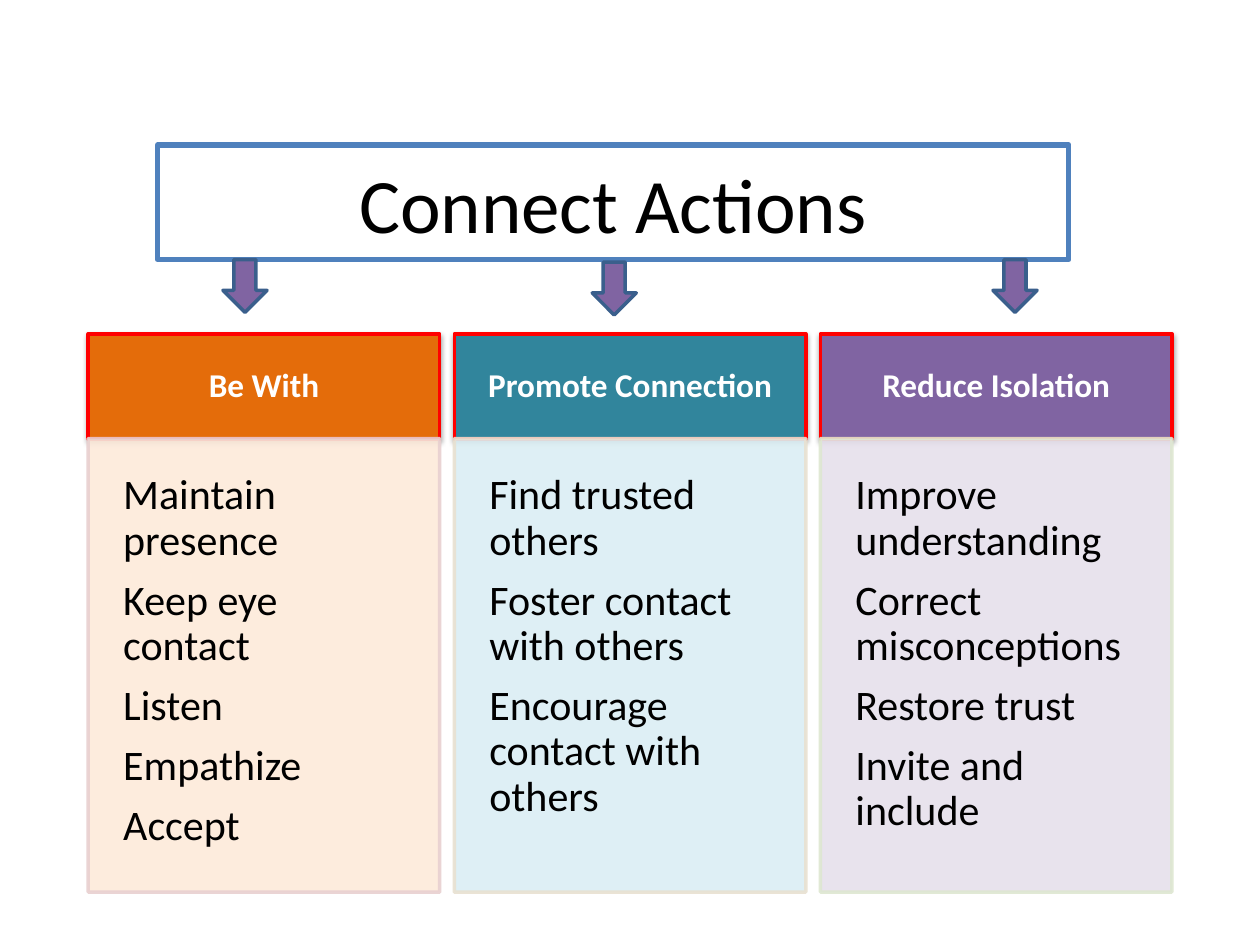
from lxml.etree import SubElement
from pptx import Presentation
from pptx.dml.color import RGBColor
from pptx.enum.shapes import MSO_SHAPE
from pptx.enum.text import MSO_ANCHOR, PP_ALIGN
from pptx.oxml.ns import qn
from pptx.util import Pt

COLUMN_LEFT, COLUMN_PITCH, COLUMN_WIDTH = 50.4, 209.2, 200.9
HEADER_TOP, HEADER_HEIGHT = 190.8, 60
BODY_TOP, BODY_HEIGHT = 250.6, 259.2

# Heading, heading fill, body fill, body line, actions
COLUMNS = [
    ("Be With", "E46C0A", "FDEADA", "E8D0D0",
     ["Maintain presence", "Keep eye contact", "Listen", "Empathize", "Accept"]),
    ("Promote Connection", "31859C", "DBEEF4", "E8E1D1",
     ["Find trusted others", "Foster contact with others",
      "Encourage contact with others"]),
    ("Reduce Isolation", "8064A2", "E6E0EC", "DEE7D1",
     ["Improve understanding", "Correct misconceptions", "Restore trust",
      "Invite and include"]),
]
ARROWS = [(127.4, 148.3), (338.4, 149.8), (567.4, 148.3)]


def color(value):
    return RGBColor.from_string(value)


def set_alpha(fill_parent, percent):
    """Make the solid fill directly inside the given element translucent."""
    choice = fill_parent.find(qn("a:solidFill"))[0]
    SubElement(choice, qn("a:alpha"), val=str(percent * 1000))


def add_soft_shadow(shape):
    effects = shape._element.spPr.find(qn("a:effectLst"))
    shadow = SubElement(effects, qn("a:outerShdw"), blurRad=str(Pt(3.1)),
                        dist=str(Pt(1.6)), dir="5400000", rotWithShape="0")
    black = SubElement(shadow, qn("a:srgbClr"), val="000000")
    SubElement(black, qn("a:alpha"), val="38000")


def add_block(slide, kind, left, top, width, height, fill, line, line_width=2):
    shape = slide.shapes.add_shape(kind, Pt(left), Pt(top), Pt(width), Pt(height))
    shape.shadow.inherit = False
    if fill:
        shape.fill.solid()
        shape.fill.fore_color.rgb = color(fill)
    else:
        shape.fill.background()
    shape.line.color.rgb = color(line)
    shape.line.width = Pt(line_width)
    return shape


def write(shape, lines, size, text_color="000000", bold=False, inset=(5, 3),
          align=PP_ALIGN.CENTER, anchor=MSO_ANCHOR.MIDDLE, spacing=1.0, gap=0):
    frame = shape.text_frame
    frame.word_wrap = True
    frame.vertical_anchor = anchor
    frame.margin_left = frame.margin_right = Pt(inset[0])
    frame.margin_top = frame.margin_bottom = Pt(inset[1])
    frame.text = "\n".join(lines)
    for para in frame.paragraphs:
        para.alignment = align
        para.line_spacing = spacing
        para.space_after = Pt(gap)
        for span in para.runs:
            span.font.name = "Calibri"
            span.font.size = Pt(size)
            span.font.bold = bold
            span.font.color.rgb = color(text_color)


def add_title(slide, text):
    box = add_block(slide, MSO_SHAPE.RECTANGLE, 90, 82.8, 520.8, 65.5,
                    None, "4F81BD", 3)
    write(box, [text], 44)


def add_column(slide, left, heading, heading_fill, body_fill, body_line, actions):
    header = add_block(slide, MSO_SHAPE.RECTANGLE, left, HEADER_TOP,
                       COLUMN_WIDTH, HEADER_HEIGHT, heading_fill, "FF0000")
    add_soft_shadow(header)
    write(header, [heading], 19, "FFFFFF", bold=True, inset=(16, 16), spacing=0.9)

    body = add_block(slide, MSO_SHAPE.RECTANGLE, left, BODY_TOP,
                     COLUMN_WIDTH, BODY_HEIGHT, body_fill, body_line)
    properties = body._element.spPr
    set_alpha(properties, 90)
    set_alpha(properties.find(qn("a:ln")), 90)
    write(body, actions, 24, inset=(20, 20), align=PP_ALIGN.LEFT,
          anchor=MSO_ANCHOR.TOP, spacing=0.9, gap=8.4)


def main():
    deck = Presentation()
    deck.slide_width, deck.slide_height = Pt(720), Pt(540)
    slide = deck.slides.add_slide(deck.slide_layouts[6])
    add_title(slide, "Connect Actions")
    for index, column in enumerate(COLUMNS):
        add_column(slide, COLUMN_LEFT + index * COLUMN_PITCH, *column)
    for left, top in ARROWS:
        add_block(slide, MSO_SHAPE.DOWN_ARROW, left, top, 25.2, 30.2,
                  "8064A2", "3A5F8C")
    deck.save("out.pptx")


if __name__ == "__main__":
    main()
